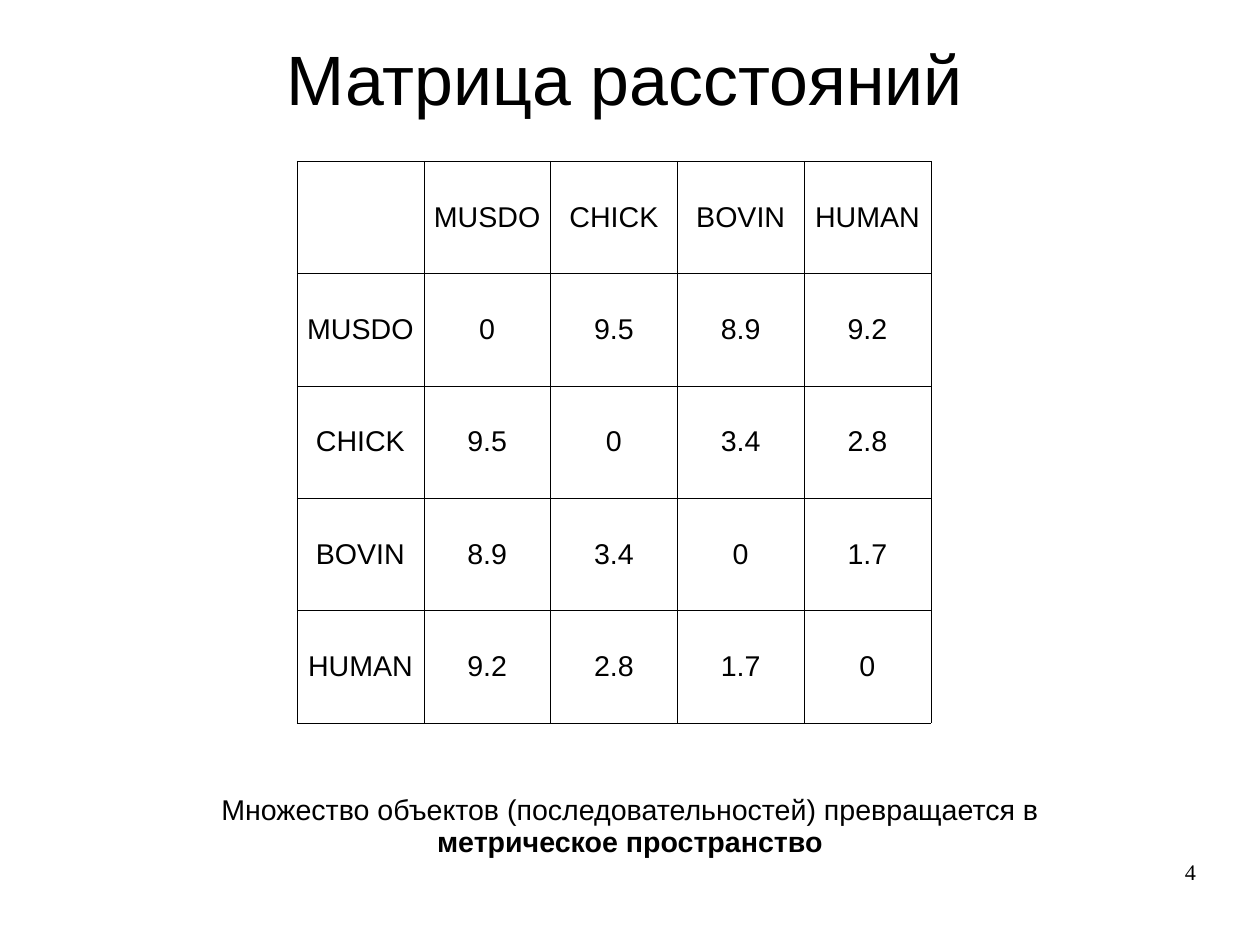
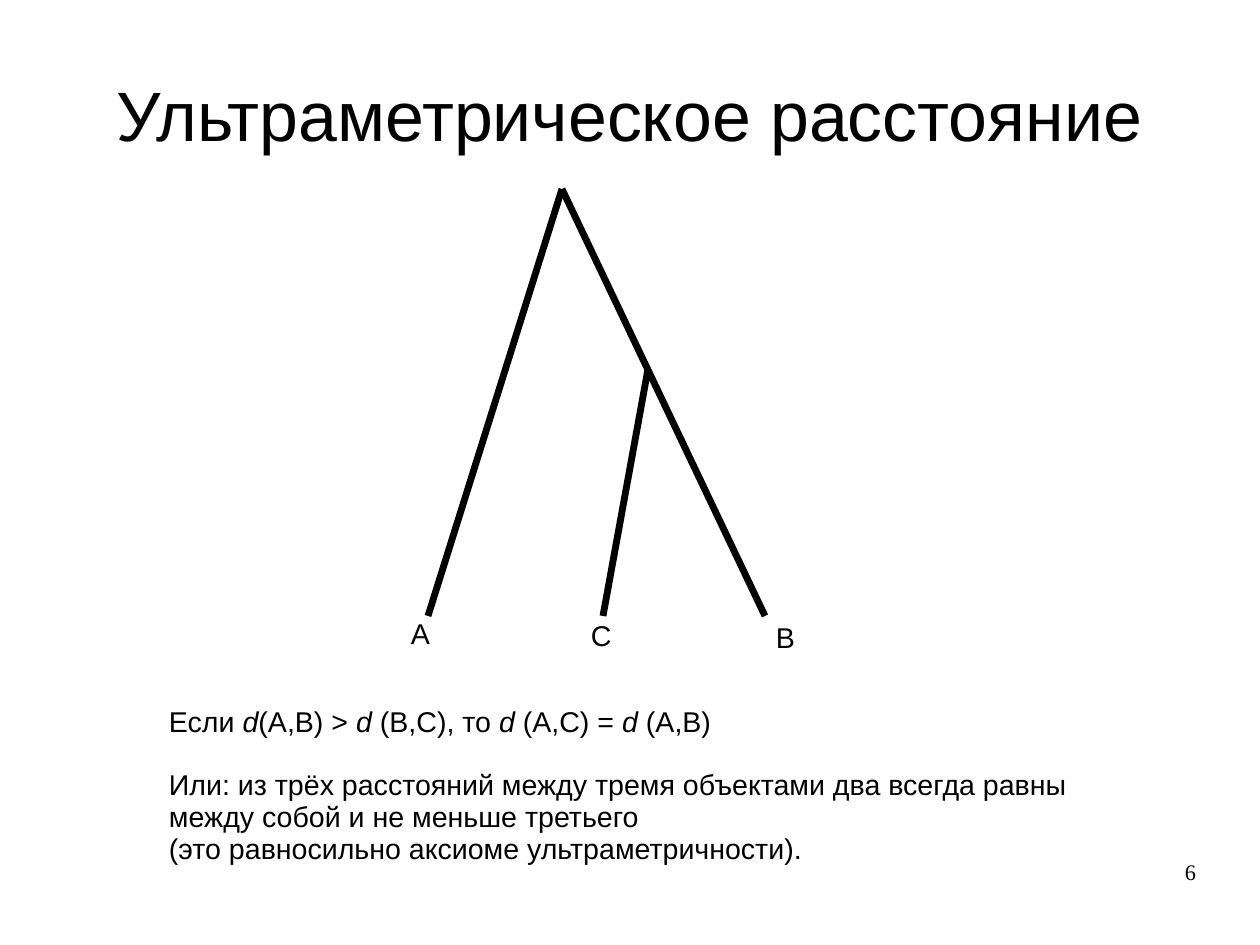
from dataclasses import dataclass

from lxml import etree
from pptx import Presentation
from pptx.dml.color import RGBColor
from pptx.enum.shapes import MSO_CONNECTOR
from pptx.enum.text import MSO_ANCHOR, MSO_AUTO_SIZE, PP_ALIGN
from pptx.oxml.ns import qn
from pptx.util import Emu, Pt

LEFT, MID, RIGHT = PP_ALIGN.LEFT, PP_ALIGN.CENTER, PP_ALIGN.RIGHT
TOP, CORE = MSO_ANCHOR.TOP, MSO_ANCHOR.MIDDLE
STRAIGHT = MSO_CONNECTOR.STRAIGHT
FIXED = MSO_AUTO_SIZE.NONE
TITLE_ONLY = 5
SCALE = 8000  # EMU per px
WIDTH, HEIGHT = 1260, 945
BREAK = "\n"


@dataclass(frozen=True)
class Theme:
    ink: str = "000000"
    paper: str = "FFFFFF"
    sans: str = "Arial"
    serif: str = "Times New Roman"
    head: int = 44
    body: int = 18
    foot: int = 14
    lead: float = 0.93
    gap: float = 19.5
    branch: float = 4.31
    rule: float = 0.28


THEME = Theme()
INK = RGBColor.from_string(THEME.ink)

NAMES = ["MUSDO", "CHICK", "BOVIN", "HUMAN"]
DISTS = [
    ["0", "9.5", "8.9", "9.2"],
    ["9.5", "0", "3.4", "2.8"],
    ["8.9", "3.4", "0", "1.7"],
    ["9.2", "2.8", "1.7", "0"],
]
ROOT, FORK = (562, 189), (648, 369)
BRANCHES = [(ROOT, (428, 616)), ((765, 616), ROOT), ((603, 616), FORK)]
LEAVES = [("A", 400, 611), ("B", 765, 615), ("C", 580, 613)]


def px(n):
    return Emu(n * SCALE)


def style(par, size, align=LEFT, font=THEME.sans, lead=THEME.lead):
    par.alignment = align
    par.line_spacing = lead
    for run in par.runs:
        run.font.size = Pt(size)
        run.font.name = font
        run.font.color.rgb = INK


def frame(text, pads, anchor=TOP):
    """Set wrapping, anchor and insets (left, top, right, bottom)."""
    text.word_wrap = True
    text.auto_size = FIXED
    text.vertical_anchor = anchor
    (text.margin_left, text.margin_top,
     text.margin_right, text.margin_bottom) = map(px, pads)


def add_page(deck, title, left, top, number):
    slide = deck.slides.add_slide(deck.slide_layouts[TITLE_ONLY])
    slide.background.fill.solid()
    slide.background.fill.fore_color.rgb = RGBColor.from_string(THEME.paper)
    head = slide.shapes.title
    head.left, head.top, head.width, head.height = map(
        px, (left, top, 1134, 146))
    frame(head.text_frame, (0, 5, 0, 0), CORE)
    head.text_frame.text = title
    style(head.text_frame.paragraphs[0], THEME.head, MID)

    foot = slide.shapes.add_textbox(*map(px, (903, 860, 293, 65))).text_frame
    frame(foot, (0, 0, 0, 0))
    foot.text = str(number)
    style(foot.paragraphs[0], THEME.foot, RIGHT, THEME.serif, 0.95)
    return slide


def add_text(slide, box, pars, align=LEFT):
    """Write paragraphs, each a list of (text, mark); mark is "", "b" or "i"."""
    text = slide.shapes.add_textbox(*map(px, box)).text_frame
    frame(text, (11, 8, 11, 6))
    for i, parts in enumerate(pars):
        par = text.add_paragraph() if i else text.paragraphs[0]
        for words, mark in parts:
            if words == BREAK:
                par.add_line_break()
                continue
            run = par.add_run()
            run.text = words
            run.font.bold = mark == "b"
            run.font.italic = mark == "i"
        style(par, THEME.body, align)
    return text


def add_line(slide, start, end):
    line = slide.shapes.add_connector(STRAIGHT, *map(px, start + end))
    line.line.color.rgb = INK
    line.line.width = Pt(THEME.branch)
    etree.SubElement(line._element.spPr, qn("a:effectLst"))


def rule_cell(cell):
    """Draw a thin line on all four sides of a cell."""
    props = cell._tc.get_or_add_tcPr()
    for i, side in enumerate(("lnL", "lnR", "lnT", "lnB")):
        edge = etree.Element(qn(f"a:{side}"), w=str(int(Pt(THEME.rule))))
        fill = etree.SubElement(edge, qn("a:solidFill"))
        etree.SubElement(fill, qn("a:srgbClr"), val=THEME.ink)
        props.insert(i, edge)


def add_grid(slide, box, rows):
    grid = slide.shapes.add_table(
        len(rows), len(rows[0]), *map(px, box)).table
    grid.first_row = grid.horz_banding = False
    for r, row in enumerate(rows):
        for c, words in enumerate(row):
            cell = grid.cell(r, c)
            cell.fill.background()
            rule_cell(cell)
            cell.vertical_anchor = CORE
            cell.margin_left = cell.margin_right = cell.margin_bottom = px(5)
            cell.margin_top = px(7)
            cell.text = words
            style(cell.text_frame.paragraphs[0], THEME.body, MID)


def add_matrix(deck):
    slide = add_page(deck, "Матрица расстояний", 58, 7, 4)
    rows = [[""] + NAMES] + [[n] + d for n, d in zip(NAMES, DISTS)]
    add_grid(slide, (297, 161, 634, 562), rows)
    add_text(slide, (180, 787, 900, 77), [[
        ("Множество объектов (последовательностей) превращается в ", ""),
        ("метрическое пространство", "b"),
    ]], MID)


def add_tree(deck):
    slide = add_page(deck, "Ультраметрическое расстояние", 63, 43, 6)
    for start, end in BRANCHES:
        add_line(slide, start, end)
    for name, left, top in LEAVES:
        add_text(slide, (left, top, 67, 43), [[(name, "")]])
    text = add_text(slide, (158, 699, 1013, 171), [
        [("Если ", ""), ("d", "i"), ("(A,B) > ", ""), ("d", "i"),
         (" (B,C), то ", ""), ("d", "i"), (" (A,C) = ", ""), ("d", "i"),
         (" (A,B)", "")],
        [("Или: из трёх расстояний между тремя объектами два всегда равны "
          "между собой и не меньше третьего", ""),
         (BREAK, ""),
         ("(это равносильно аксиоме ультраметричности).", "")],
    ])
    text.paragraphs[1].space_before = Pt(THEME.gap)


def main():
    deck = Presentation()
    deck.slide_width, deck.slide_height = px(WIDTH), px(HEIGHT)
    add_matrix(deck)
    add_tree(deck)
    deck.save("out.pptx")


if __name__ == "__main__":
    main()
